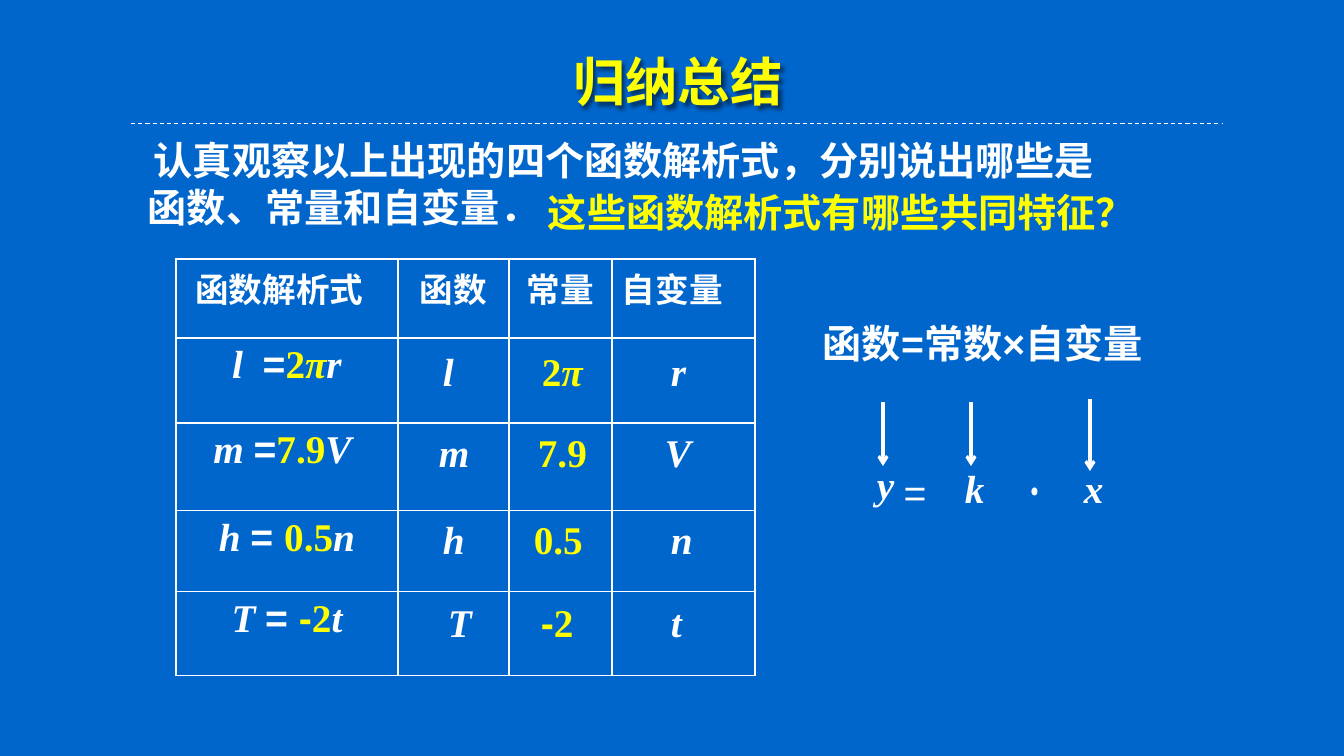
"""Build the summary slide on four functions and their shared form."""
import dataclasses

import lxml.etree
import pptx
import pptx.dml.color
import pptx.enum.dml
import pptx.enum.shapes
import pptx.enum.text
import pptx.oxml.ns
import pptx.util


@dataclasses.dataclass(frozen=True)
class Theme:
    blue: str = "0066CC"
    white: str = "FFFFFF"
    yellow: str = "FFFF00"
    shade: str = "000000"
    serif: str = "Times New Roman"
    sans: str = "Arial"
    chinese: str = "Noto Sans CJK SC"
    title: float = 37.4
    body: int = 28
    header: int = 24


THEME = Theme()
PX = 914400 / 100.8
ALIGN = pptx.enum.text.PP_ALIGN
INSET = 10

STYLES = {
    "variable": dict(italic=True),
    "spread": dict(italic=True, spacing=700),
    "number": dict(color=THEME.yellow),
    "symbol": dict(color=THEME.yellow, italic=True),
    "equals": dict(font=THEME.sans),
    "sign": dict(color=THEME.yellow, font=THEME.sans),
}
TITLE = ("归纳总结", (563, 44, 263, 74))
PROMPTS = [
    ("认真观察以上出现的四个函数解析式，分别说出哪些是函数、常量和自变量．",
     (138, 131, 988, 105), THEME.white, 6),
    ("这些函数解析式有哪些共同特征？", (538, 183, 583, 57), THEME.yellow, 0),
    ("函数=常数×自变量", (813, 314, 456, 57), THEME.white, 0),
]
HEADERS = [(" 函数解析式", ALIGN.JUSTIFY), ("函数", ALIGN.CENTER),
           ("常量", ALIGN.CENTER), ("自变量", ALIGN.LEFT)]
FUNCTIONS = [
    ("l", [(" ", "spread"), ("=", "equals")], [("2", "number"), ("π", "symbol")],
     "r", "", (433, 342), (542, 671)),
    ("m", [(" ", "variable"), ("=", "equals")], [("7.9", "number")],
     "V", " ", (429, 423), (538, 665)),
    ("h", [(" ", "variable"), ("= ", "equals")], [("0.5", "number")],
     "n", "", (433, 510), (534, 671)),
    ("T", [(" ", "variable"), ("= ", "equals")], [("-", "sign"), ("2", "number")],
     "t", "", (438, 593), (541, 671)),
]
VALUES_SIZE = (298, 57)
TABLE_AT = (176, 259)
COLUMNS = [222, 111, 103, 143]
ROWS = [79, 85, 88, 81, 84]
LETTERS = [("y", 867, 455), ("k", 955, 459), ("x", 1074, 459)]
ARROWS = [(883, 402, 466), (971, 402, 466), (1090, 399, 471)]
EQUALS_AT = (883, 463, 72, 57)
DOT_AT = (1032, 488, 5, 7)
RULE = (131, 124, 1223)


def px(*lengths):
    return [pptx.util.Emu(round(length * PX)) for length in lengths]


def rgb(value):
    return pptx.dml.color.RGBColor.from_string(value)


def element(parent, tag, **attributes):
    return lxml.etree.SubElement(parent, pptx.oxml.ns.qn(tag), attributes)


def write(para, text, font=THEME.serif, size=THEME.body, color=THEME.white,
          bold=True, italic=False, spacing=0):
    span = para.add_run()
    span.text = text
    span.font.name = font
    span.font.size = pptx.util.Pt(size)
    span.font.bold = bold
    span.font.italic = italic
    span.font.color.rgb = rgb(color)
    element(span.font._element, "a:ea", typeface=font)
    if spacing:
        span.font._element.set("spc", str(spacing))


def add_box(page, at):
    box = page.shapes.add_textbox(*px(*at))
    box.text_frame.word_wrap = True
    return box.text_frame.paragraphs[0]


def add_text(page, text, at, indent=0, **style):
    para = add_box(page, at)
    if indent:
        para._p.get_or_add_pPr().set("indent", str(px(indent)[0]))
    write(para, text, **style)


def add_line(page, start, end, width, arrow=False):
    line = page.shapes.add_connector(
        pptx.enum.shapes.MSO_CONNECTOR.STRAIGHT, *px(*start, *end))
    line.line.color.rgb = rgb(THEME.white)
    line.line.width = pptx.util.Pt(width)
    if arrow:
        element(line.line._get_or_add_ln(), "a:tailEnd", type="arrow")
    else:
        line.line.dash_style = pptx.enum.dml.MSO_LINE.DASH
    element(line._element.spPr, "a:effectLst")


def write_spans(para, spans):
    for text, kind in spans:
        write(para, text, **STYLES[kind])


def format_cell(cell, top=5):
    cell.margin_left, cell.margin_top = px(INSET, top)
    properties = cell._tc.get_or_add_tcPr()
    for side in ("a:lnL", "a:lnR", "a:lnT", "a:lnB"):
        border = element(properties, side, w="12700")
        element(element(border, "a:solidFill"), "a:srgbClr", val=THEME.white)
    cell.fill.background()


def add_function_table(page):
    frame = page.shapes.add_table(
        len(ROWS), len(COLUMNS), *px(*TABLE_AT, sum(COLUMNS), sum(ROWS)))
    table = frame.table
    table.first_row = table.horz_banding = False
    for column, width in zip(table.columns, px(*COLUMNS)):
        column.width = width
    for row, height in zip(table.rows, px(*ROWS)):
        row.height = height
    for cell in table.iter_cells():
        format_cell(cell)
    for column, (text, align) in enumerate(HEADERS):
        cell = table.cell(0, column)
        cell.margin_top = px(13)[0]
        para = cell.text_frame.paragraphs[0]
        para.alignment = align
        write(para, text, font=THEME.sans, size=THEME.header)
    for row, (result, equals, constant, variable, tail, at, stops) in enumerate(FUNCTIONS, 1):
        para = table.cell(row, 0).text_frame.paragraphs[0]
        para.alignment = ALIGN.CENTER
        write_spans(para, [(result, "variable"), *equals, *constant,
                           (variable + tail, "variable")])
        add_values(page, result, constant, variable, at, stops)


def add_values(page, result, constant, variable, at, stops):
    para = add_box(page, (*at, *VALUES_SIZE))
    tabs = element(para._p.get_or_add_pPr(), "a:tabLst")
    for stop in px(*[stop - at[0] - INSET for stop in stops]):
        element(tabs, "a:tab", pos=str(stop), algn="l")
    write_spans(para, [(result + "\t", "variable"), *constant,
                       ("\t" + variable, "variable")])


def add_title(page):
    text, at = TITLE
    title = page.shapes.title
    title.left, title.top, title.width, title.height = px(*at)
    title.fill.background()
    cast = element(element(title._element.spPr, "a:effectLst"), "a:outerShdw",
                   blurRad="38100", dist="38100", dir="2700000")
    element(element(cast, "a:srgbClr", val=THEME.shade), "a:alpha", val="50000")
    title.text_frame.vertical_anchor = pptx.enum.text.MSO_ANCHOR.MIDDLE
    title.text_frame.word_wrap = False
    para = title.text_frame.paragraphs[0]
    para.alignment = ALIGN.LEFT
    write(para, text, font=THEME.chinese, size=THEME.title, color=THEME.yellow)


def main():
    deck = pptx.Presentation()
    deck.slide_width, deck.slide_height = px(1344, 756)
    page = deck.slides.add_slide(deck.slide_layouts[5])
    page.background.fill.solid()
    page.background.fill.fore_color.rgb = rgb(THEME.blue)

    left, level, right = RULE
    add_line(page, (left, level), (right, level), 0.75)
    add_title(page)
    add_function_table(page)
    for text, at, color, indent in PROMPTS:
        add_text(page, text, at, indent, font=THEME.sans, color=color)
    for letter, x, y in LETTERS:
        add_text(page, letter, (x, y, 60, 57), italic=True)
    for x, top, bottom in ARROWS:
        add_line(page, (x, top), (x, bottom), 2.25, arrow=True)
    add_text(page, " =", EQUALS_AT, font=THEME.sans, bold=False)
    dot = page.shapes.add_shape(pptx.enum.shapes.MSO_SHAPE.OVAL, *px(*DOT_AT))
    dot.shadow.inherit = False
    dot.fill.solid()
    dot.fill.fore_color.rgb = dot.line.color.rgb = rgb(THEME.white)
    dot.line.width = pptx.util.Pt(0.75)
    deck.save("out.pptx")


if __name__ == "__main__":
    main()
